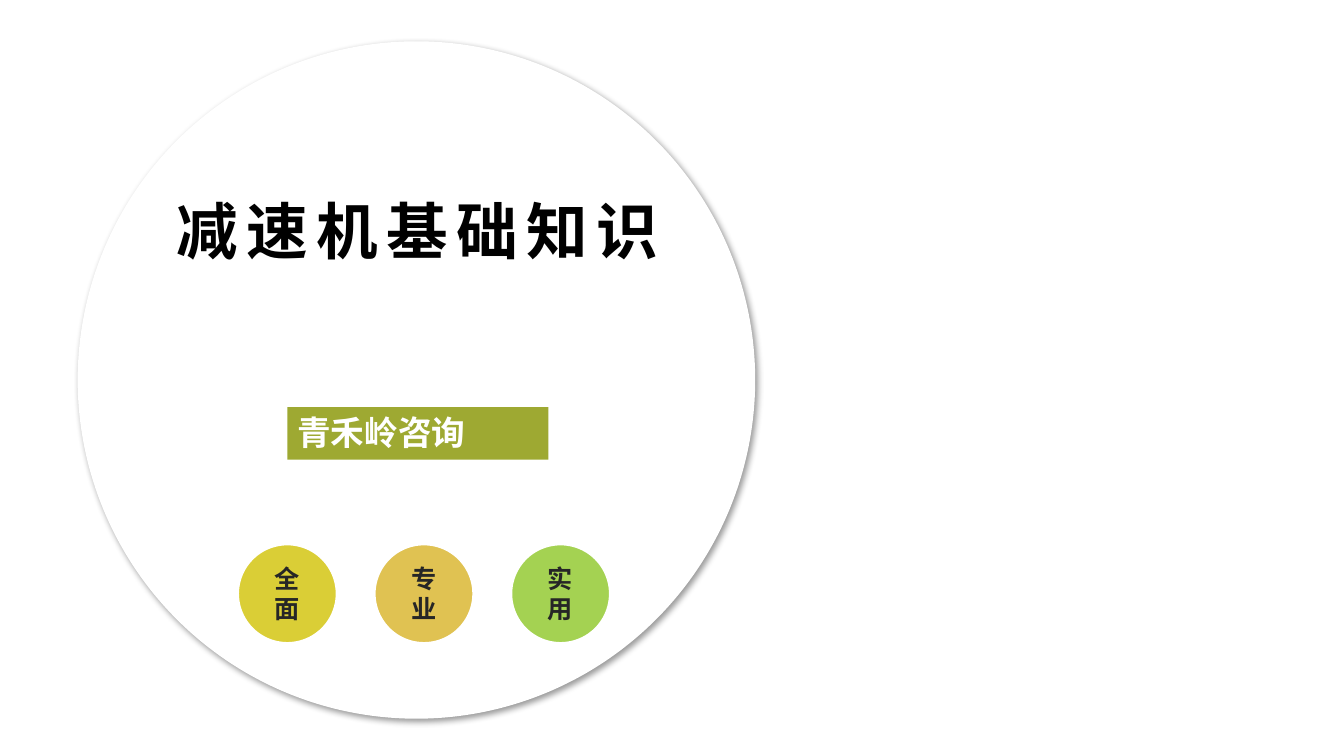
from dataclasses import dataclass

from lxml.etree import SubElement
from pptx import Presentation
from pptx.dml.color import RGBColor
from pptx.enum.shapes import MSO_SHAPE as Kind
from pptx.enum.text import MSO_ANCHOR as Anchor, PP_ALIGN as Align
from pptx.oxml.ns import qn
from pptx.shapes.autoshape import Shape
from pptx.slide import Slide
from pptx.util import Inches, Pt

SANS = "Noto Sans CJK SC"


@dataclass
class Label:
    text: str
    size: float
    font: str
    color: str
    align: Align
    anchor: Anchor
    east: str = SANS


@dataclass
class Badge:
    text: str
    fill: str


def tint(code: str) -> RGBColor:
    return RGBColor.from_string(code)


def draw(slide: Slide, kind: Kind, left: float, top: float,
         wide: float, high: float, fill: str) -> Shape:
    shape = slide.shapes.add_shape(
        kind, Inches(left), Inches(top), Inches(wide), Inches(high))
    shape.shadow.inherit = False
    shape.fill.solid()
    shape.fill.fore_color.rgb = tint(fill)
    shape.line.fill.background()
    return shape


def cast(shape: Shape) -> None:
    effect = shape._element.spPr.find(qn("a:effectLst"))
    shade = SubElement(effect, qn("a:outerShdw"), blurRad=str(Pt(4)),
                       dist=str(Pt(3)), dir="2700000", algn="tl",
                       rotWithShape="0")
    color = SubElement(shade, qn("a:srgbClr"), val="000000")
    SubElement(color, qn("a:alpha"), val="40000")


def write(shape: Shape, label: Label, gap: float = 0, line: float = 1) -> None:
    frame = shape.text_frame
    frame.word_wrap = True
    frame.vertical_anchor = label.anchor
    para = frame.paragraphs[0]
    para.alignment = label.align
    para.line_spacing = line
    run = para.add_run()
    run.text = label.text
    font = run.font
    font.size = Pt(label.size)
    font.bold = True
    font.color.rgb = tint(label.color)
    font.name = label.font
    props = run._r.get_or_add_rPr()
    SubElement(props, qn("a:ea"), typeface=label.east)
    if gap:
        props.set("spc", str(round(gap * 100)))


def main() -> None:
    deck = Presentation()
    deck.slide_width = Inches(13.33)
    deck.slide_height = Inches(7.5)
    slide = deck.slides.add_slide(deck.slide_layouts[6])

    cast(draw(slide, Kind.OVAL, 0.77, 0.41, 6.72, 6.72, "FFFFFF"))

    title = slide.shapes.add_textbox(
        Inches(0.66), Inches(1.83), Inches(6.96), Inches(0.82))
    title.text_frame.margin_bottom = 0
    face = "Noto Sans CJK JP"
    write(title, Label("减速机基础知识", 44, face, "000000",
                       Align.CENTER, Anchor.BOTTOM, face), 6, 1.1)

    banner = draw(slide, Kind.RECTANGLE, 2.85, 4.04, 2.59, 0.52, "9EA932")
    write(banner, Label("青禾岭咨询", 24, SANS, "FFFFFF",
                        Align.JUSTIFY, Anchor.TOP))

    badges = [Badge("全面", "DACE36"), Badge("专业", "E0C252"),
              Badge("实用", "A4D252")]
    for i, badge in enumerate(badges):
        disc = draw(slide, Kind.OVAL, 2.36 + i * 1.355, 5.4,
                    0.98, 0.98, badge.fill)
        disc.line.color.rgb = tint("FFFFFF")
        disc.line.width = Pt(1.5)
        write(disc, Label(badge.text, 18, "Arial", "262626",
                          Align.CENTER, Anchor.MIDDLE))

    deck.save("out.pptx")


if __name__ == "__main__":
    main()
